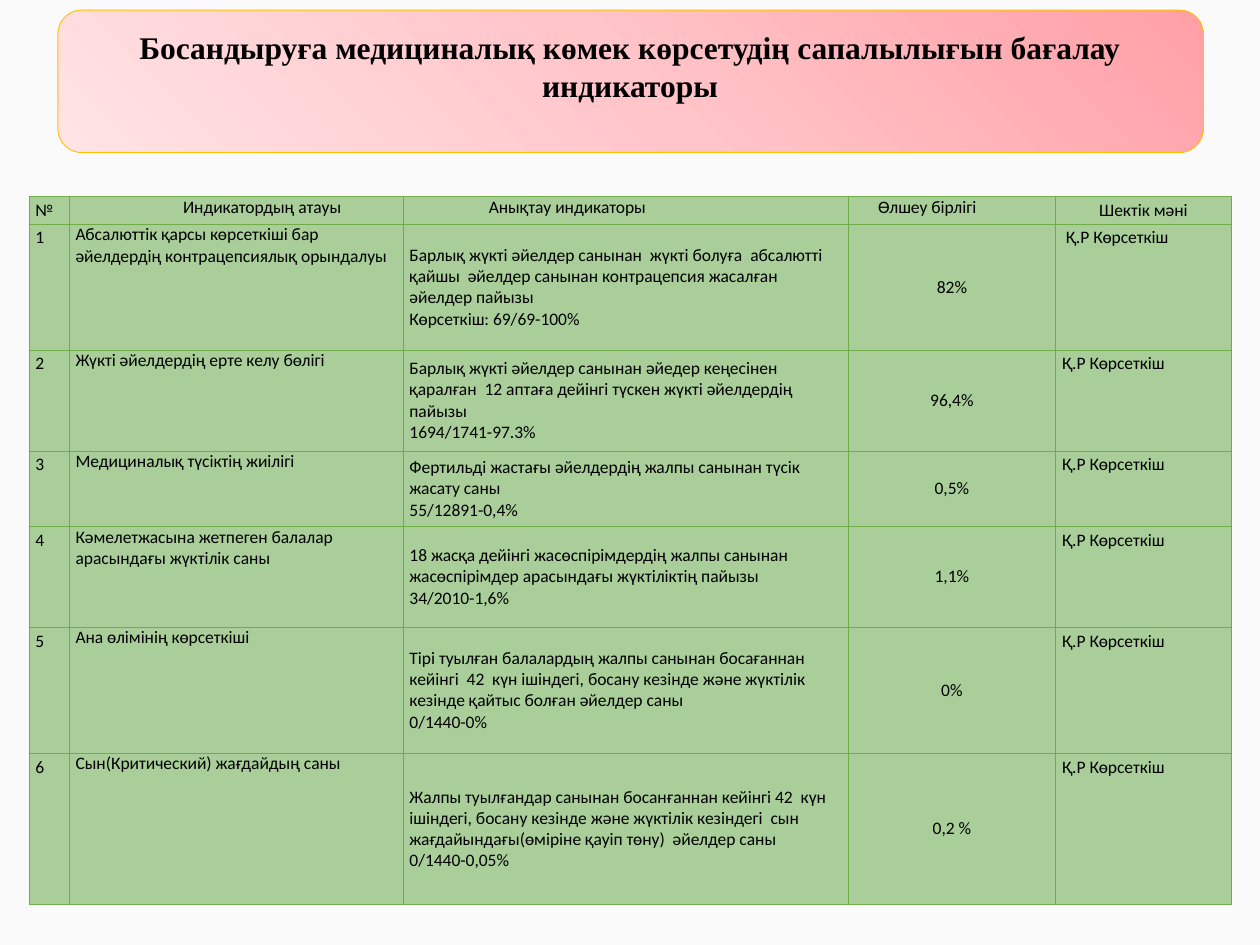
import dataclasses

import lxml.etree
import pptx
import pptx.dml.color
import pptx.enum.shapes
import pptx.enum.text
import pptx.oxml.ns
import pptx.util

ALIGN = pptx.enum.text.PP_ALIGN
ANCHOR = pptx.enum.text.MSO_ANCHOR
qn = pptx.oxml.ns.qn


@dataclasses.dataclass(frozen=True)
class Theme:
    background: str = "FAFAFA"
    text: str = "000000"
    cell: str = "A9CE9A"
    border: str = "70AD47"
    banner_line: str = "FFC000"
    banner_stops: tuple = ((0, "FFA0A7"), (50, "FFC5C9"), (100, "FFE3E5"))
    title_font: str = "Times New Roman"
    body_font: str = "Calibri"
    title_size: int = 18
    body_size: int = 10
    line_width: float = 0.5


THEME = Theme()
WIDTH, HEIGHT = pptx.util.Inches(10), pptx.util.Inches(7.5)
ROW_UNIT = pptx.util.Inches(0.2)
ROW_UNITS = (1.1, 5, 4, 3, 4, 5, 6)
COLUMNS = (0.32, 2.65, 3.53, 1.65, 1.39)
HEADER_INDENTS = (0, 0.41, 0.63, 0.19, 0)
LIMIT = "Қ.Р Көрсеткіш"

TITLE = ("Босандыруға медициналық көмек көрсетудің сапалылығын бағалау", "индикаторы")
HEADER = ("№", "Индикатордың атауы", "Анықтау индикаторы", "Өлшеу бірлігі", "Шектік мәні")
INDICATORS = (
    ("Абсалюттік қарсы көрсеткіші бар әйелдердің контрацепсиялық орындалуы",
     "Барлық жүкті әйелдер санынан  жүкті болуға  абсалютті қайшы  әйелдер санынан "
     "контрацепсия жасалған әйелдер пайызы",
     "Көрсеткіш: 69/69-100%", "82%"),
    ("Жүкті әйелдердің ерте келу бөлігі",
     "Барлық жүкті әйелдер санынан әйедер кеңесінен қаралған  12 аптаға дейінгі "
     "түскен жүкті әйелдердің пайызы",
     "1694/1741-97.3%", "96,4%"),
    ("Медициналық түсіктің жиілігі",
     "Фертильді жастағы әйелдердің жалпы санынан түсік жасату саны",
     "55/12891-0,4%", "0,5%"),
    ("Кәмелетжасына жетпеген балалар арасындағы жүктілік саны",
     "18 жасқа дейінгі жасөспірімдердің жалпы санынан жасөспірімдер арасындағы "
     "жүктіліктің пайызы",
     "34/2010-1,6%", "1,1%"),
    ("Ана өлімінің көрсеткіші",
     "Тірі туылған балалардың жалпы санынан босағаннан кейінгі  42  күн ішіндегі, "
     "босану кезінде және жүктілік кезінде қайтыс болған әйелдер саны",
     "0/1440-0%", "0%"),
    ("Сын(Критический) жағдайдың саны",
     "Жалпы туылғандар санынан босанғаннан кейінгі 42  күн ішіндегі, босану кезінде "
     "және жүктілік кезіндегі  сын жағдайындағы(өміріне қауіп төну)  әйелдер саны",
     "0/1440-0,05%", "0,2 %"),
)


def rgb(color):
    return pptx.dml.color.RGBColor.from_string(color)


def place(left, top, width, height):
    return (int(WIDTH * left / 100), int(HEIGHT * top / 100),
            int(WIDTH * width / 100), int(HEIGHT * height / 100))


def write(tf, lines, font, size, align, bold=False, spacing=None, indent=0):
    for i, line in enumerate(lines):
        p = tf.paragraphs[0] if i == 0 else tf.add_paragraph()
        p.alignment = align
        if spacing:
            p.line_spacing = spacing
        if indent:
            p._p.get_or_add_pPr().set("marL", str(pptx.util.Inches(indent)))
        r = p.add_run()
        r.text = line
        r.font.name = font
        r.font.size = pptx.util.Pt(size)
        r.font.bold = bold
        r.font.color.rgb = rgb(THEME.text)


def fill_radially(shape):
    shape.fill.gradient()
    grad = shape.element.spPr.find(qn("a:gradFill"))
    for child in list(grad):
        grad.remove(child)
    stops = lxml.etree.SubElement(grad, qn("a:gsLst"))
    for position, color in THEME.banner_stops:
        stop = lxml.etree.SubElement(stops, qn("a:gs"), pos=str(position * 1000))
        lxml.etree.SubElement(stop, qn("a:srgbClr"), val=color)
    shade = lxml.etree.SubElement(grad, qn("a:path"), path="circle")
    lxml.etree.SubElement(shade, qn("a:fillToRect"), l="100000", b="100000")


def add_banner(s):
    banner = s.shapes.add_shape(pptx.enum.shapes.MSO_SHAPE.ROUNDED_RECTANGLE,
                                *place(4.6, 1.07, 90.9, 15.07))
    banner.shadow.inherit = False
    fill_radially(banner)
    banner.line.color.rgb = rgb(THEME.banner_line)
    banner.line.width = pptx.util.Pt(THEME.line_width)
    s.shapes.title.element.addprevious(banner.element)


def add_title(s):
    title = s.shapes.title
    title.left, title.top, title.width, title.height = place(0, 2.27, 100, 12.13)
    tf = title.text_frame
    tf.auto_size = pptx.enum.text.MSO_AUTO_SIZE.NONE
    tf.vertical_anchor = ANCHOR.TOP
    write(tf, TITLE, THEME.title_font, THEME.title_size, ALIGN.CENTER, bold=True)


def add_borders(cell):
    tcPr = cell._tc.get_or_add_tcPr()
    for i, side in enumerate(("a:lnL", "a:lnR", "a:lnT", "a:lnB")):
        ln = lxml.etree.Element(qn(side), w=str(pptx.util.Pt(THEME.line_width)))
        fill = lxml.etree.SubElement(ln, qn("a:solidFill"))
        lxml.etree.SubElement(fill, qn("a:srgbClr"), val=THEME.border)
        tcPr.insert(i, ln)


def fill_cell(cell, lines, align, anchor=ANCHOR.TOP, spacing=None, indent=0):
    cell.margin_left = cell.margin_right = pptx.util.Inches(0.05)
    cell.margin_top = cell.margin_bottom = 0
    cell.vertical_anchor = anchor
    cell.fill.solid()
    cell.fill.fore_color.rgb = rgb(THEME.cell)
    add_borders(cell)
    write(cell.text_frame, lines, THEME.body_font, THEME.body_size, align,
          spacing=spacing, indent=indent)


def add_indicator_table(s):
    left, top, width, _ = place(2.3, 20.8, 95.4, 0)
    height = int(ROW_UNIT * sum(ROW_UNITS))
    table = s.shapes.add_table(len(ROW_UNITS), len(COLUMNS), left, top, width, height).table
    table.first_row = table.horz_banding = False
    for column, inches in zip(table.columns, COLUMNS):
        column.width = pptx.util.Inches(inches)
    for row, units in zip(table.rows, ROW_UNITS):
        row.height = int(ROW_UNIT * units)

    header_aligns = (ALIGN.LEFT, ALIGN.CENTER, ALIGN.LEFT, ALIGN.LEFT, ALIGN.CENTER)
    spacings = (1.15, None, None, None, 1.15)
    for c, label in enumerate(HEADER):
        fill_cell(table.cell(0, c), [label], header_aligns[c],
                  spacing=spacings[c], indent=HEADER_INDENTS[c])

    aligns = (ALIGN.LEFT, ALIGN.LEFT, ALIGN.LEFT, ALIGN.CENTER, ALIGN.LEFT)
    anchors = (ANCHOR.TOP, ANCHOR.TOP, ANCHOR.MIDDLE, ANCHOR.MIDDLE, ANCHOR.TOP)
    for n, (name, definition, result, value) in enumerate(INDICATORS, 1):
        texts = ([str(n)], [name], [definition, result], [value], [LIMIT])
        for c, lines in enumerate(texts):
            indent = 0.03 if (n, c) == (1, 4) else 0
            fill_cell(table.cell(n, c), lines, aligns[c], anchors[c], spacings[c], indent)


def main():
    prs = pptx.Presentation()
    prs.slide_width, prs.slide_height = WIDTH, HEIGHT
    s = prs.slides.add_slide(prs.slide_layouts[5])
    s.background.fill.solid()
    s.background.fill.fore_color.rgb = rgb(THEME.background)
    add_banner(s)
    add_title(s)
    add_indicator_table(s)
    prs.save("out.pptx")


if __name__ == "__main__":
    main()
